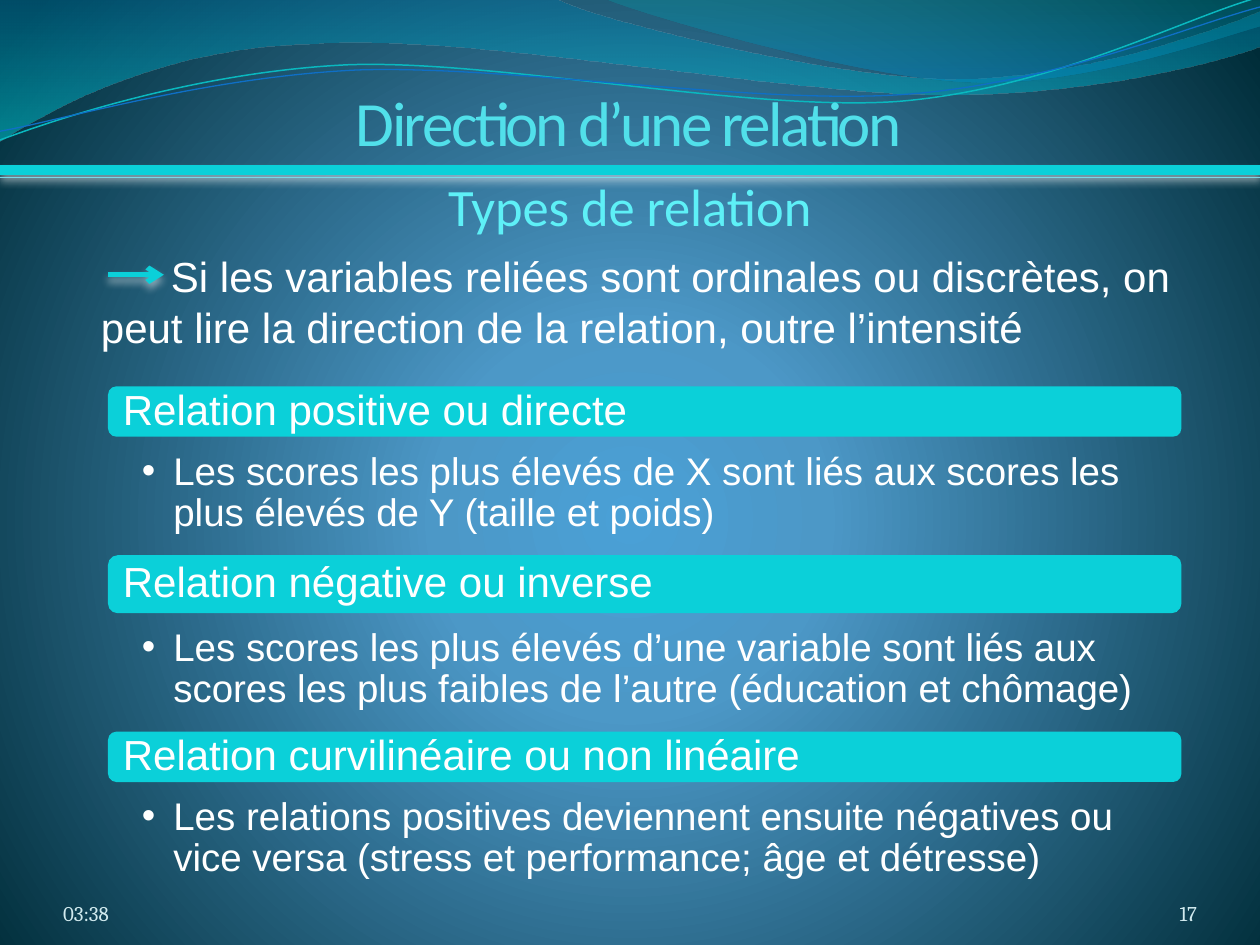
from dataclasses import dataclass
from lxml import etree
from pptx import Presentation
from pptx.dml.color import RGBColor
from pptx.enum.shapes import MSO_CONNECTOR as CONN, MSO_SHAPE as SHAPE
from pptx.enum.text import MSO_ANCHOR as ANCHOR, PP_ALIGN as ALIGN
from pptx.oxml.ns import qn
from pptx.util import Pt

WAVES = [
    ([(0, 0), (317, -1), (343, 12, 478, 45, 546, 45), (614, 45, 690, 19, 720, 6.5),
      (721, 26), (708, 32, 626, 55, 537, 54), (448, 54, 275, 20, 185, 24.5),
      (93, 26, 33, 60, -1, 81)],
     [(0, "0074A1", 45), (100, "00C6CF", 55)]),
    ([(345, -1), (366, 8, 491, 45, 554, 47), (616, 50, 692, 23, 720, 15), (720, 0)],
     [(0, "00A1A9", 30), (80, "008BBF", 45)]),
]
STRANDS = [
    ([(0, 80), (35, 67, 114, 41, 199, 37), (284, 34, 427, 64, 513, 58),
      (600, 51, 675, 11, 719, -1.5)], "0AB8BF", 0.85),
    ([(0, 75), (34, 69, 118, 44, 204, 40), (290, 37, 430, 60, 516, 54),
      (602, 48, 678, 15, 720, 4)], "0F6FC6", 0.75),
]
RELATIONS = [
    ("Relation positive ou directe", 28.8,
     "Les scores les plus élevés de X sont liés aux scores les plus élevés de Y (taille et poids)"),
    ("Relation négative ou inverse", 33.1,
     "Les scores les plus élevés d’une variable sont liés aux scores les plus faibles de l’autre "
     "(éducation et chômage)"),
    ("Relation curvilinéaire ou non linéaire", 28.8,
     "Les relations positives deviennent ensuite négatives ou vice versa "
     "(stress et performance; âge et détresse)"),
]


def rgb(code):
    return RGBColor.from_string(code)


def sub(parent, tag, **attrs):
    return etree.SubElement(parent, qn(tag), {k: str(v) for k, v in attrs.items()})


def color_xml(parent, code, alpha):
    sub(sub(parent, "a:srgbClr", val=code), "a:alpha", val=alpha * 1000)


def grad_xml(parent, stops, center=None):
    """Replace the solid fill of parent by a vertical or a circular gradient."""
    grad = etree.Element(qn("a:gradFill"), rotWithShape="1")
    stop_list = sub(grad, "a:gsLst")
    for pos, code, alpha in stops:
        color_xml(sub(stop_list, "a:gs", pos=pos * 1000), code, alpha)
    if center:
        sub(sub(grad, "a:path", path="circle"), "a:fillToRect", **center)
    else:
        sub(grad, "a:lin", ang=5400000, scaled=1)
    parent.replace(parent.find(qn("a:solidFill")), grad)


def curve_xml(sp, path):
    """Merge each three line steps that stand for a curve into one cubic step."""
    steps = iter(list(sp._element.iter(qn("a:lnTo"))))
    for seg in path[1:]:
        first = next(steps)
        if len(seg) == 6:
            cubic = etree.Element(qn("a:cubicBezTo"))
            first.addprevious(cubic)
            for step in (first, next(steps), next(steps)):
                cubic.append(step[0])
                step.getparent().remove(step)


def write(sp, text, size=24, font="Arial", color="FFFFFF", align=ALIGN.LEFT, anchor=ANCHOR.TOP,
          inset=(7.2, 3.6, 7.2, 3.6), spacing=None, spc=None, left=0, first=0, bullet=None):
    """Put one formatted paragraph into a shape."""
    tf = sp.text_frame
    tf.word_wrap, tf.vertical_anchor = True, anchor
    tf.margin_left, tf.margin_top, tf.margin_right, tf.margin_bottom = map(Pt, inset)
    p = tf.paragraphs[0]
    p.alignment, p.line_spacing = align, spacing
    pPr = p._p.get_or_add_pPr()
    pPr.set("marL", str(Pt(left)))
    pPr.set("indent", str(Pt(first)))
    if bullet:
        sub(pPr, "a:buFont", typeface="Arial")
        sub(pPr, "a:buChar", char=bullet)
    r = p.add_run()
    r.text = text
    r.font.size, r.font.name, r.font.color.rgb = Pt(size), font, rgb(color)
    if spc:
        r._r.get_or_add_rPr().set("spc", str(int(spc * 100)))


@dataclass
class Deck:
    """Holds the accent colour and the current slide, and draws on it."""
    s: object
    accent: str = "0BD0D9"

    def background(self, stops, center):
        self.s.background.fill.solid()
        grad_xml(self.s._element.cSld.bg.bgPr, stops, center)

    def free(self, path, close):
        pts = [(Pt(seg[i]), Pt(seg[i + 1])) for seg in path for i in range(0, len(seg), 2)]
        fb = self.s.shapes.build_freeform(*pts[0], scale=1.0)
        fb.add_line_segments(pts[1:], close=close)
        sp = fb.convert_to_shape()
        curve_xml(sp, path)
        sp.shadow.inherit = False
        return sp

    def wave(self, path, stops):
        sp = self.free(path, True)
        sp.fill.solid()
        sp.line.fill.background()
        grad_xml(sp._element.spPr, stops)

    def strand(self, path, color, width):
        sp = self.free(path, False)
        sp.fill.background()
        sp.line.color.rgb, sp.line.width = rgb(color), Pt(width)

    def text(self, x, y, w, h, text, **fmt):
        write(self.s.shapes.add_textbox(Pt(x), Pt(y), Pt(w), Pt(h)), text, **fmt)

    def bar(self, x, y, w, h):
        sp = self.s.shapes.add_shape(SHAPE.ROUNDED_RECTANGLE, Pt(x), Pt(y), Pt(w), Pt(h))
        sp.shadow.inherit = False
        sp.fill.solid()
        sp.fill.fore_color.rgb = rgb(self.accent)
        sp.line.fill.background()

    def line(self, x1, x2, y, width, color=None, arrow=False, shadow=True):
        sp = self.s.shapes.add_connector(CONN.STRAIGHT, Pt(x1), Pt(y), Pt(x2), Pt(y))
        sp.line.color.rgb, sp.line.width = rgb(color or self.accent), Pt(width)
        if arrow:
            sub(sp.line._get_or_add_ln(), "a:tailEnd", type="arrow")
        effects = sub(sp._element.spPr, "a:effectLst")
        if shadow:
            color_xml(sub(effects, "a:outerShdw", blurRad=Pt(4.5), dist=Pt(3), dir=5400000,
                          rotWithShape=0), "FFFFFF", 48)


def main():
    prs = Presentation()
    prs.slide_width, prs.slide_height = Pt(720), Pt(540)
    deck = Deck(prs.slides.add_slide(prs.slide_layouts[6]))
    deck.background([(0, "4AA0D6", 100), (25, "4C98C7", 100), (100, "002C38", 100)],
                    dict(l=10000, t=110000, r=10000, b=100000))
    for wave in WAVES:
        deck.wave(*wave)
    for strand in STRANDS:
        deck.strand(*strand)

    deck.text(50.6, 139.7, 641.5, 360.7,
              "Si les variables reliées sont ordinales ou discrètes, on peut lire la direction "
              "de la relation, outre l’intensité", first=40)
    footer = dict(size=12, font="Cambria", color="D1EAEE", anchor=ANCHOR.BOTTOM, inset=(0,) * 4)
    deck.text(624, 500.4, 60, 28.8, "17", align=ALIGN.RIGHT, **footer)
    deck.text(36, 500.4, 168, 28.8, "03:38", **footer)
    deck.text(0, 39, 720, 51.8, "Direction d’une relation", size=36, font="Calibri",
              color="51E0EA", align=ALIGN.CENTER, anchor=ANCHOR.BOTTOM, inset=(0, 0, 1.4, 0),
              spc=-1.5)
    deck.text(0, 95.8, 720, 43.9, "Types de relation", size=30, font="Calibri",
              color="5EF0F7", align=ALIGN.CENTER)

    x, y, w, body_h, pad = 61.7, 220.8, 613.4, 67.7, 1.4
    for heading, bar_h, body in RELATIONS:
        deck.bar(x, y, w, bar_h)
        deck.text(x + pad, y + pad, w - 2 * pad, bar_h - 2 * pad, heading,
                  anchor=ANCHOR.MIDDLE, inset=(7.2,) * 4, spacing=0.9)
        deck.text(x, y + bar_h, w, body_h, body, size=22, inset=(19.4, 8.6, 12.2, 2.2),
                  spacing=0.9, left=18, first=-18, bullet="•")
        y += bar_h + body_h

    deck.line(61.9, 93.6, 157, 3, arrow=True)
    deck.line(0, 720, 97.2, 6)
    deck.line(0, 720, 101.5, 0.75, color="77D9E8", shadow=False)
    prs.save("out.pptx")


if __name__ == "__main__":
    main()
